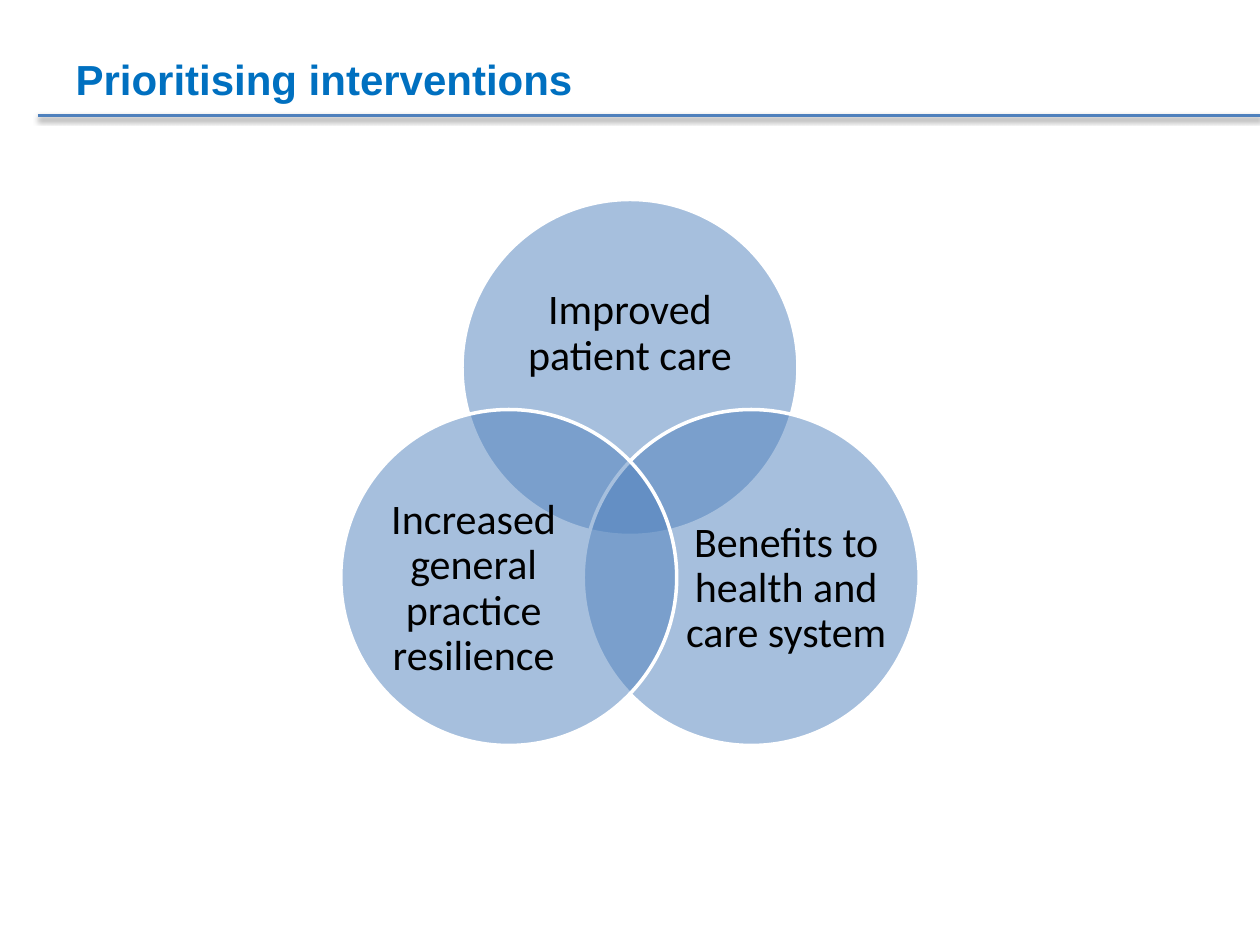
import math

from lxml import etree
from pptx import Presentation
from pptx import util as u
from pptx.dml.color import RGBColor
from pptx.enum import shapes, text
from pptx.oxml import ns

BLUE = RGBColor(0x4F, 0x81, 0xBD)
TITLE_BLUE = RGBColor(0x00, 0x70, 0xC0)
WHITE = RGBColor(0xFF, 0xFF, 0xFF)
BLACK = RGBColor(0x00, 0x00, 0x00)

DIAMETER = 192
ORBIT = 80
CENTRE_X, CENTRE_Y = 360, 290

VENN = [
    ("Improved patient care", -90, (289.5, 147.6, 141, 86.4)),
    ("Benefits to health and care system", 30, (391.7, 283.7, 115.2, 105.6)),
    ("Increased general practice resilience", 150, (213.1, 283.7, 115.2, 105.6)),
]


def add_child(parent, tag, **attributes):
    return etree.SubElement(parent, ns.qn(tag), attributes)


class SlideBuilder:
    title_font = "Arial"
    body_font = "Calibri"
    size = 24
    line_width = 2

    def __init__(self, page):
        self.page = page
        self.group = page.shapes.add_group_shape()

    def add_span(self, para, words, font, colour, bold=False):
        span = para.add_run()
        span.text = words
        span.font.name = font
        span.font.size = u.Pt(self.size)
        span.font.bold = bold
        span.font.color.rgb = colour

    def title(self, words, left, top, width, height):
        box = self.page.shapes.title
        box.left, box.top = u.Pt(left), u.Pt(top)
        box.width, box.height = u.Pt(width), u.Pt(height)
        frame = box.text_frame
        frame.vertical_anchor = text.MSO_ANCHOR.TOP
        frame.auto_size = text.MSO_AUTO_SIZE.NONE
        para = frame.paragraphs[0]
        para.alignment = text.PP_ALIGN.LEFT
        para.line_spacing = u.Pt(34)
        self.add_span(para, words, self.title_font, TITLE_BLUE, bold=True)

    def circle(self, centre_x, centre_y, diameter):
        circle = self.group.shapes.add_shape(
            shapes.MSO_SHAPE.OVAL,
            u.Pt(centre_x - diameter / 2), u.Pt(centre_y - diameter / 2),
            u.Pt(diameter), u.Pt(diameter))
        circle.shadow.inherit = False
        circle.fill.solid()
        circle.fill.fore_color.rgb = BLUE
        colour = circle._element.spPr.find(ns.qn("a:solidFill"))[0]
        add_child(colour, "a:alpha", val="50000")
        circle.line.color.rgb = WHITE
        circle.line.width = u.Pt(self.line_width)

    def label(self, words, left, top, width, height):
        box = self.group.shapes.add_textbox(
            u.Pt(left), u.Pt(top), u.Pt(width), u.Pt(height))
        frame = box.text_frame
        frame.word_wrap = True
        frame.vertical_anchor = text.MSO_ANCHOR.MIDDLE
        frame.margin_left = frame.margin_right = 0
        frame.margin_top = frame.margin_bottom = 0
        para = frame.paragraphs[0]
        para.alignment = text.PP_ALIGN.CENTER
        para.line_spacing = 0.9
        self.add_span(para, words, self.body_font, BLACK)

    def rule(self, start, end, y):
        rule = self.page.shapes.add_connector(
            shapes.MSO_CONNECTOR.STRAIGHT,
            u.Pt(start), u.Pt(y), u.Pt(end), u.Pt(y))
        rule.line.color.rgb = BLUE
        rule.line.width = u.Pt(self.line_width)
        effects = add_child(rule._element.spPr, "a:effectLst")
        shadow = add_child(
            effects, "a:outerShdw", blurRad=str(u.Pt(3.1)), dist=str(u.Pt(1.6)),
            dir="5400000", rotWithShape="0")
        colour = add_child(shadow, "a:srgbClr", val=str(BLACK))
        add_child(colour, "a:alpha", val="38000")


def main():
    deck = Presentation()
    deck.slide_width, deck.slide_height = u.Pt(720), u.Pt(540)
    page = deck.slides.add_slide(deck.slide_layouts[5])
    builder = SlideBuilder(page)
    builder.title("Prioritising interventions", 36, 21.6, 508.3, 90)
    for words, degrees, label_area in VENN:
        angle = math.radians(degrees)
        builder.circle(CENTRE_X + ORBIT * math.cos(angle),
                       CENTRE_Y + ORBIT * math.sin(angle), DIAMETER)
        builder.label(words, *label_area)
    builder.rule(21.6, 720, 66)
    deck.save("out.pptx")


if __name__ == "__main__":
    main()
